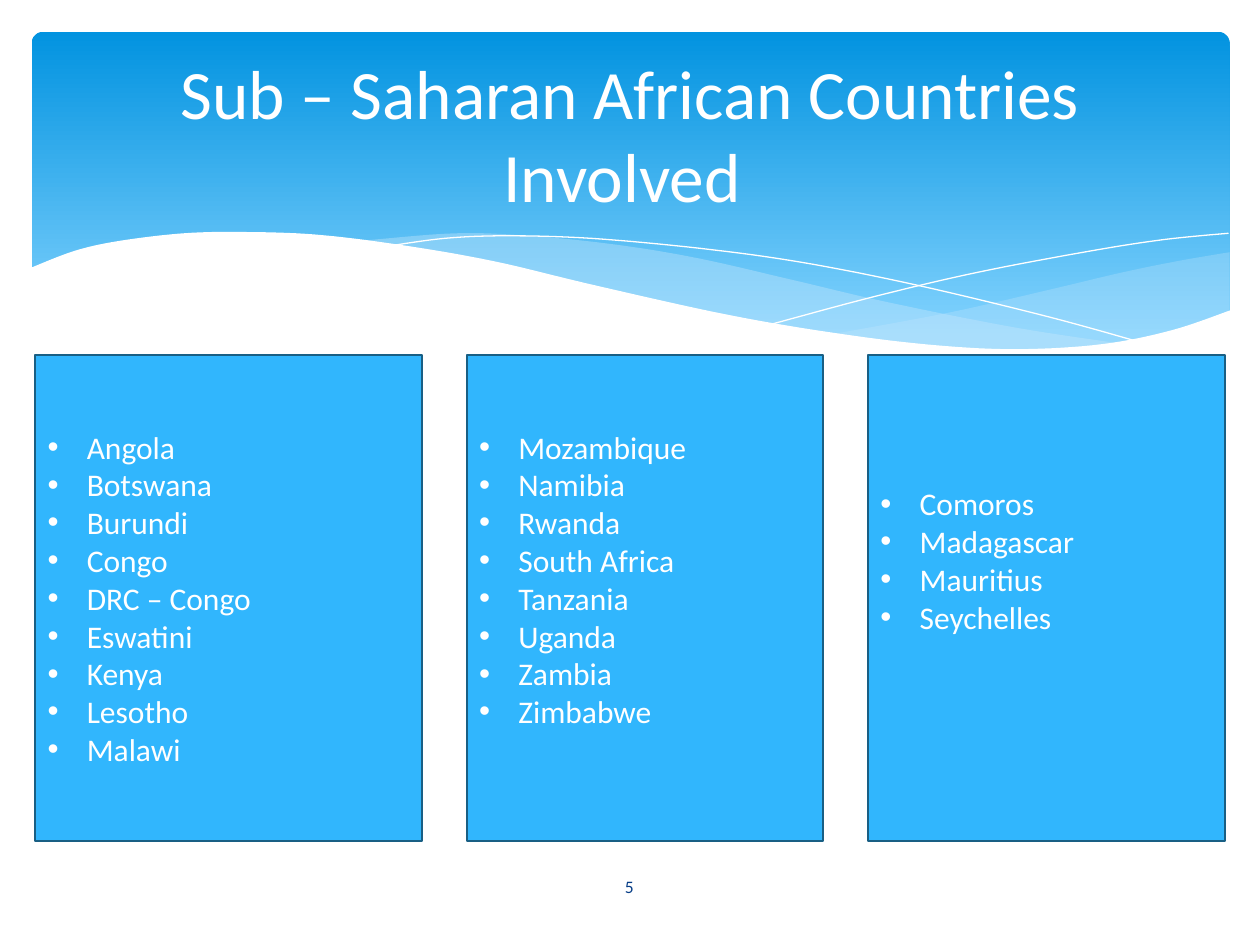
from collections import namedtuple
from dataclasses import dataclass

from lxml import etree
from pptx import Presentation
from pptx.dml.color import RGBColor
from pptx.enum.shapes import MSO_SHAPE
from pptx.enum.text import MSO_ANCHOR, MSO_AUTO_SIZE, PP_ALIGN
from pptx.oxml.ns import qn
from pptx.util import Cm, Pt

RECTANGLE, ROUNDED = MSO_SHAPE.RECTANGLE, MSO_SHAPE.ROUNDED_RECTANGLE
MIDDLE, NO_AUTOFIT = MSO_ANCHOR.MIDDLE, MSO_AUTO_SIZE.NONE
LEFT, CENTER = PP_ALIGN.LEFT, PP_ALIGN.CENTER
TITLE_ONLY = 5

Box = namedtuple("Box", "left top width height")


@dataclass(frozen=True)
class Theme:
    font: str = "Calibri"
    white: RGBColor = RGBColor.from_string("FFFFFF")
    banner_top: RGBColor = RGBColor.from_string("0293E0")
    banner_bottom: RGBColor = RGBColor.from_string("83D3FE")
    ribbon: RGBColor = RGBColor.from_string("C6E7FC")
    panel: RGBColor = RGBColor.from_string("31B6FD")
    panel_line: RGBColor = RGBColor.from_string("195F84")
    number: RGBColor = RGBColor.from_string("073E87")
    title_size: Pt = Pt(39.6)
    list_size: Pt = Pt(18)
    number_size: Pt = Pt(10)
    panel_line_width: Pt = Pt(1.25)


THEME = Theme()

# Wave edges lie on a grid that is 951 units wide, counted from the banner's corner.
GRID_WIDTH = 951
RIGHT_RIBBON = [
    [(951, 175), (910, 182), (866, 191), (807, 205), (728, 223), (636, 240)],
    [(636, 240), (694, 247), (756, 252), (810, 252), (864, 247), (910, 237), (951, 222)],
]
LEFT_RIBBON = [
    [(868, 248), (782, 235), (681, 215), (604, 197), (530, 180), (464, 169),
     (395, 162), (336, 160), (261, 166)],
    [(261, 166), (337, 178), (424, 197), (505, 215), (593, 233), (670, 245),
     (736, 252), (803, 253), (868, 248)],
]
FALLING_LINE = [(284, 170), (328, 164), (376, 162), (444, 164), (531, 172),
                (611, 183), (702, 201), (806, 226), (882, 247)]
RISING_LINE = [(588, 232), (670, 210), (751, 191), (841, 174), (899, 165), (950, 160)]
WHITE_WAVE = [
    [(952, 221), (905, 237), (850, 248), (784, 252), (719, 249), (643, 240),
     (554, 225), (450, 202), (366, 182), (291, 169), (225, 161), (168, 159),
     (121, 160), (70, 166), (34, 174), (-2, 188)],
    [(-2, 304), (952, 304)],
]

# Width of the panel, spare room under its list, countries
COLUMNS = [
    (Cm(7.8), Cm(0), ["Angola", "Botswana", "Burundi", "Congo", "DRC – Congo",
                      "Eswatini", "Kenya", "Lesotho", "Malawi"]),
    (Cm(7.19), Cm(0.76), ["Mozambique", "Namibia", "Rwanda", "South Africa",
                          "Tanzania", "Uganda", "Zambia", "Zimbabwe"]),
    (Cm(7.19), Cm(1.52), ["Comoros", "Madagascar", "Mauritius", "Seychelles"]),
]


def smooth(points, steps=8):
    """Catmull-Rom curve through the points."""
    if len(points) < 3:
        return points
    padded = [points[0], *points, points[-1]]
    curve = [points[0]]
    for a, b, c, d in zip(padded, padded[1:], padded[2:], padded[3:]):
        for step in range(1, steps + 1):
            t = step / steps
            curve.append(tuple(
                0.5 * (2 * q + (r - p) * t + (2 * p - 5 * q + 4 * r - s) * t ** 2
                       + (3 * q - p - 3 * r + s) * t ** 3)
                for p, q, r, s in zip(a, b, c, d)))
    return curve


def add_wave(slide, box, edges, color, opacity=None, closed=True):
    unit = box.width / GRID_WIDTH
    start, *rest = [(round(box.left + x * unit), round(box.top + y * unit))
                    for edge in edges for x, y in smooth(edge)]
    builder = slide.shapes.build_freeform(*start, scale=1.0)
    builder.add_line_segments(rest, close=closed)
    wave = builder.convert_to_shape()
    wave.shadow.inherit = False
    if not closed:
        wave.fill.background()
        wave.line.color.rgb = color
        wave.line.width = 0
        return
    wave.line.fill.background()
    wave.fill.solid()
    wave.fill.fore_color.rgb = color
    if opacity is not None:
        rgb = wave._element.spPr.find(".//" + qn("a:srgbClr"))
        etree.SubElement(rgb, qn("a:alpha"), val=str(opacity * 1000))


def add_banner(slide, box):
    banner = slide.shapes.add_shape(ROUNDED, *box)
    banner.adjustments[0] = 0.034
    banner.shadow.inherit = False
    banner.line.fill.background()
    banner.fill.gradient()
    banner.fill.gradient_angle = 270
    stops = [(0, THEME.banner_top), (0.9, THEME.banner_bottom)]
    for stop, (position, color) in zip(banner.fill.gradient_stops, stops):
        stop.position = position
        stop.color.rgb = color
    add_wave(slide, box, RIGHT_RIBBON, THEME.ribbon, opacity=29)
    add_wave(slide, box, LEFT_RIBBON, THEME.ribbon, opacity=40)
    for line in (FALLING_LINE, RISING_LINE):
        add_wave(slide, box, [line], THEME.white, closed=False)
    add_wave(slide, box, WHITE_WAVE, THEME.white)


def write(paragraph, text, size, color, alignment):
    paragraph.alignment = alignment
    run = paragraph.add_run()
    run.text = text
    run.font.name = THEME.font
    run.font.size = size
    run.font.color.rgb = color


def set_title(slide, box, text):
    title = slide.shapes.title
    title.left, title.top, title.width, title.height = box
    slide.shapes._spTree.append(title._element)  # in front of the banner
    frame = title.text_frame
    frame.auto_size = NO_AUTOFIT
    frame.vertical_anchor = MIDDLE
    write(frame.paragraphs[0], text, THEME.title_size, THEME.white, CENTER)


def add_bullet(paragraph, indent):
    properties = paragraph._p.get_or_add_pPr()
    properties.set("marL", str(indent))
    properties.set("indent", str(-indent))
    etree.SubElement(properties, qn("a:buFont"), typeface="Arial")
    etree.SubElement(properties, qn("a:buChar"), char="•")


def add_country_panel(slide, box, countries, spare):
    panel = slide.shapes.add_shape(RECTANGLE, *box)
    panel.shadow.inherit = False
    panel.fill.solid()
    panel.fill.fore_color.rgb = THEME.panel
    panel.line.color.rgb = THEME.panel_line
    panel.line.width = THEME.panel_line_width
    frame = panel.text_frame
    frame.vertical_anchor = MIDDLE
    frame.margin_bottom = Cm(0.13) + spare
    for index, country in enumerate(countries):
        paragraph = frame.add_paragraph() if index else frame.paragraphs[0]
        write(paragraph, country, THEME.list_size, THEME.white, LEFT)
        add_bullet(paragraph, Cm(0.79))


def add_country_columns(slide, box, gap):
    left = box.left
    for width, spare, countries in COLUMNS:
        add_country_panel(slide, Box(left, box.top, width, box.height), countries, spare)
        left += width + gap


def add_slide_number(slide, box, number):
    frame = slide.shapes.add_textbox(*box).text_frame
    frame.word_wrap = True
    frame.vertical_anchor = MIDDLE
    write(frame.paragraphs[0], number, THEME.number_size, THEME.number, CENTER)


def main():
    presentation = Presentation()
    presentation.slide_width, presentation.slide_height = Cm(25.4), Cm(19.05)
    slide = presentation.slides.add_slide(presentation.slide_layouts[TITLE_ONLY])
    add_banner(slide, Box(Cm(0.64), Cm(0.64), Cm(24.15), Cm(6.86)))
    set_title(slide, Box(Cm(1.27), Cm(0.94), Cm(22.86), Cm(3.48)),
              "Sub – Saharan African Countries Involved ")
    add_country_columns(slide, Box(Cm(0.71), Cm(7.15), Cm(23.98), Cm(9.8)), Cm(0.9))
    add_slide_number(slide, Box(Cm(11.07), Cm(17.37), Cm(3.23), Cm(1.02)), "5")
    presentation.save("out.pptx")


if __name__ == "__main__":
    main()
